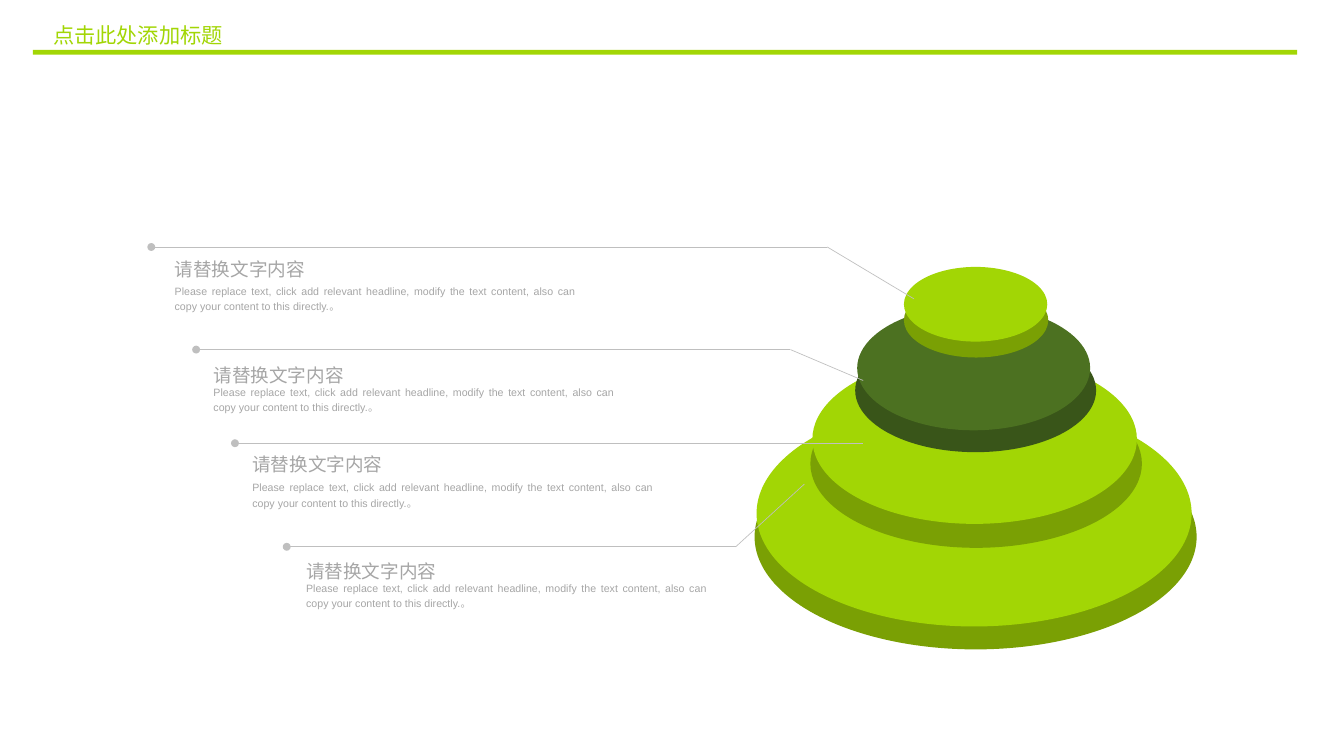
from lxml import etree
from pptx import Presentation
from pptx.dml.color import RGBColor
from pptx.enum.shapes import MSO_CONNECTOR, MSO_SHAPE
from pptx.enum.text import MSO_ANCHOR, MSO_AUTO_SIZE, PP_ALIGN
from pptx.oxml.ns import qn
from pptx.util import Emu, Pt

OVAL, RECTANGLE = MSO_SHAPE.OVAL, MSO_SHAPE.RECTANGLE
STRAIGHT = MSO_CONNECTOR.STRAIGHT
LEFT, JUSTIFY = PP_ALIGN.LEFT, PP_ALIGN.JUSTIFY
TOP, MIDDLE = MSO_ANCHOR.TOP, MSO_ANCHOR.MIDDLE
FIXED, GROW = MSO_AUTO_SIZE.NONE, MSO_AUTO_SIZE.SHAPE_TO_FIT_TEXT

EMU_PER_PX = 9525
TITLE_ONLY = 5
LIME, OLIVE = "A2D605", "7AA004"
FOREST, DARK_FOREST = "4C7121", "395519"
RULE_GREY, TEXT_GREY = "BFBFBF", "A6A6A6"
CHINESE_FONT = "Noto Sans CJK SC"

HEADING = "请替换文字内容"
DETAIL = ("Please replace text, click add relevant headline, modify the text content, "
          "also can copy your content to this directly.。")

TITLE_STYLE = {
    "color": LIME,
    "font": {"size": Pt(16), "name": CHINESE_FONT, "bold": False},
    "paragraph": {"alignment": LEFT},
    "frame": {"word_wrap": True, "auto_size": FIXED, "vertical_anchor": MIDDLE},
}
HEADING_STYLE = {
    "color": TEXT_GREY,
    "font": {"size": Pt(14), "name": "Arial"},
    "paragraph": {"alignment": LEFT, "line_spacing": 1.2},
    "frame": {"word_wrap": True, "auto_size": GROW, "vertical_anchor": TOP},
}
DETAIL_STYLE = {
    **HEADING_STYLE,
    "font": {"size": Pt(8), "name": "Arial"},
    "paragraph": {"alignment": JUSTIFY, "line_spacing": 1.2},
}

TIERS = [
    ((758, 426, 444, 226), OLIVE, (760, 402, 437, 227), LIME),
    ((814, 381, 333, 169), OLIVE, (816, 356, 326, 170), LIME),
    ((859, 330, 242, 124), DARK_FOREST, (861, 307, 234, 125), FOREST),
    ((908, 284, 145, 75), OLIVE, (908, 268, 144, 75), LIME),
]
CALLOUTS = [
    ([(918, 300), (831, 248), (152, 248)], 166, 250, 279),
    ([(867, 382), (794, 351), (197, 351)], 205, 356, 380),
    ([(867, 445), (236, 445)], 244, 446, 476),
    ([(808, 486), (739, 549), (288, 549)], 298, 553, 577),
]


def px(length):
    return Emu(length * EMU_PER_PX)


def rgb(code):
    return RGBColor.from_string(code)


def apply(target, values):
    for attribute, value in values.items():
        setattr(target, attribute, value)


class SlideBuilder:
    def __init__(self, slide):
        self.slide = slide

    def fill_text(self, frame, wording, style):
        apply(frame, style["frame"])
        paragraph = frame.paragraphs[0]
        apply(paragraph, style["paragraph"])
        run = paragraph.add_run()
        run.text = wording
        apply(run.font, style["font"])
        run.font.color.rgb = rgb(style["color"])
        etree.SubElement(run._r.get_or_add_rPr(), qn("a:ea"), typeface=CHINESE_FONT)

    def title(self, wording, box):
        heading = self.slide.shapes.title
        apply(heading, dict(zip(("left", "top", "width", "height"), map(px, box))))
        self.fill_text(heading.text_frame, wording, TITLE_STYLE)

    def text(self, wording, box, style):
        label = self.slide.shapes.add_textbox(*map(px, box))
        self.fill_text(label.text_frame, wording, style)

    def solid(self, kind, box, color):
        shape = self.slide.shapes.add_shape(kind, *map(px, box))
        shape.shadow.inherit = False
        shape.fill.solid()
        shape.fill.fore_color.rgb = rgb(color)
        shape.line.fill.background()

    def leader(self, points):
        for start, end in zip(points, points[1:]):
            segment = self.slide.shapes.add_connector(STRAIGHT, *map(px, start + end))
            segment.line.width = Pt(0.5)
            segment.line.color.rgb = rgb(RULE_GREY)
            etree.SubElement(segment._element.spPr, qn("a:effectLst"))
        etree.SubElement(segment.line._get_or_add_ln(), qn("a:tailEnd"), type="oval")


def main():
    deck = Presentation()
    deck.slide_width, deck.slide_height = px(1350), px(759)
    builder = SlideBuilder(deck.slides.add_slide(deck.slide_layouts[TITLE_ONLY]))

    builder.solid(RECTANGLE, (33, 50, 1270, 5), LIME)
    builder.title("点击此处添加标题", (44, 17, 199, 37))
    for side_box, side_color, top_box, top_color in TIERS:
        builder.solid(OVAL, side_box, side_color)
        builder.solid(OVAL, top_box, top_color)
    for points, left, heading_top, detail_top in CALLOUTS:
        builder.leader(points)
        builder.text(DETAIL, (left, detail_top, 422, 40), DETAIL_STYLE)
        builder.text(HEADING, (left, heading_top, 166, 36), HEADING_STYLE)

    deck.save("out.pptx")


if __name__ == "__main__":
    main()
